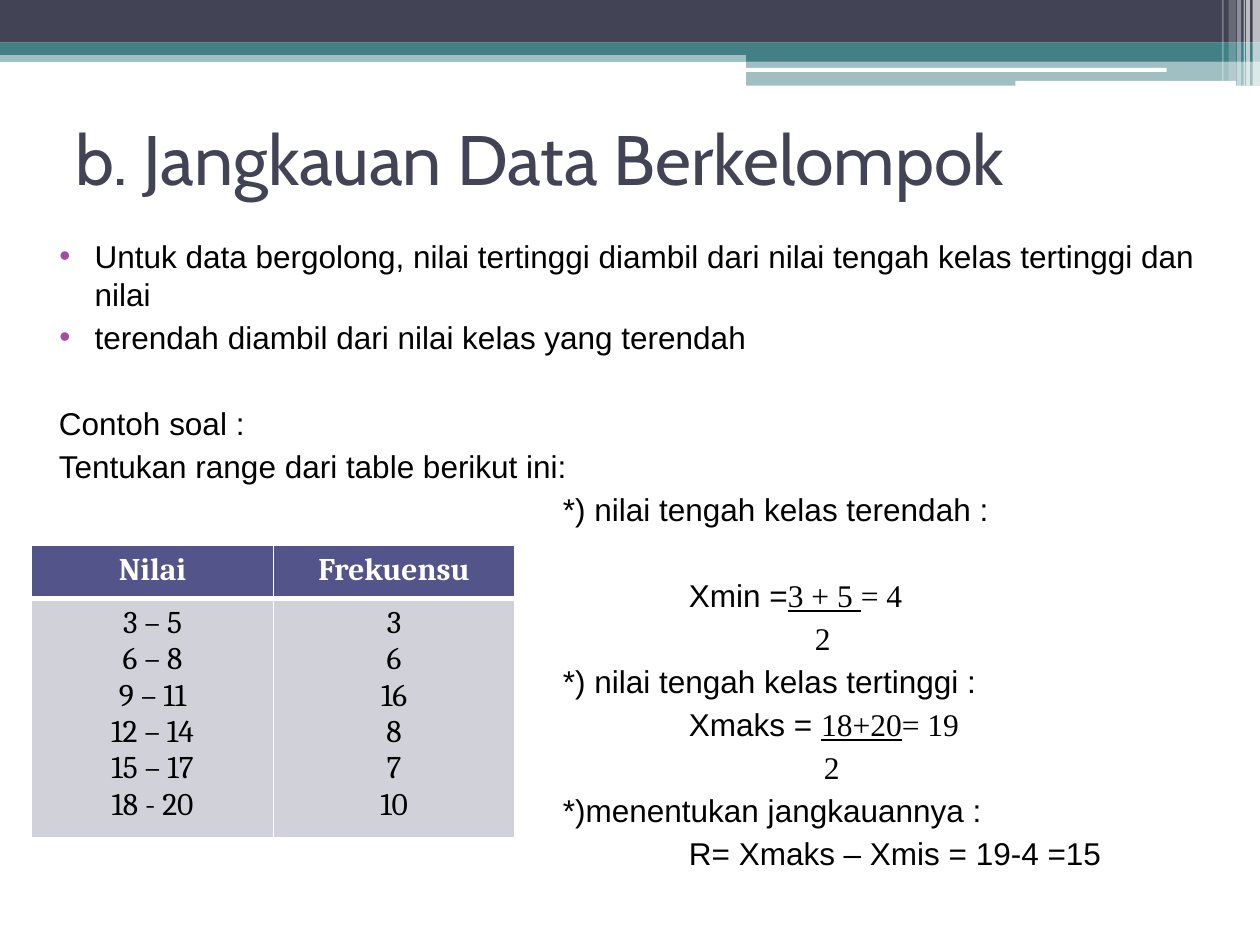
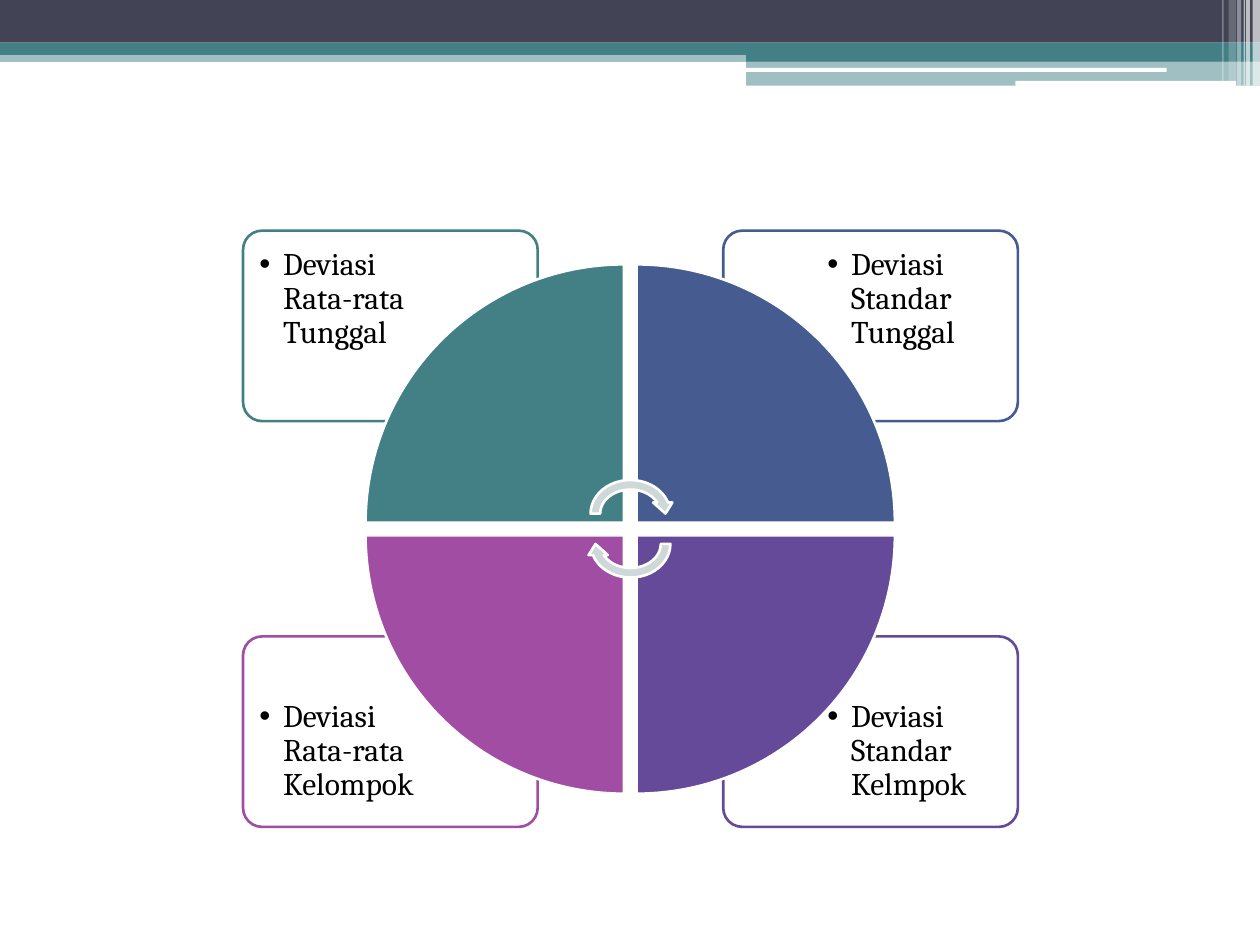
from lxml import etree
from pptx import Presentation
from pptx.dml.color import RGBColor
from pptx.enum.shapes import MSO_SHAPE as Shape
from pptx.enum.text import MSO_ANCHOR as Anchor, PP_ALIGN as Align
from pptx.oxml.ns import qn
from pptx.util import Cm, Pt

COLORS = {
    "ink": "424456", "teal": "438086", "blue": "465B90", "violet": "654A99",
    "purple": "A04DA3", "header": "53548A", "cell": "D1D1DA",
    "arrow": "CFD8D9", "white": "FFFFFF", "black": "000000",
}
WIDTH, HEIGHT = 25.4, 19.05
BANDS = [
    (Shape.RECTANGLE, 0, 1.02, WIDTH, 0.23, "teal", 50),
    (Shape.RECTANGLE, 0, 0, WIDTH, 0.86, "ink", 100),
    (Shape.RECTANGLE, 0, 0.86, WIDTH, 0.25, "teal", 100),
    (Shape.RECTANGLE, 15.04, 0.99, 10.36, 0.25, "teal", 100),
    (Shape.RECTANGLE, 15.04, 1.22, 10.36, 0.51, "teal", 50),
    (Shape.ROUNDED_RECTANGLE, 15.01, 1.37, 8.51, 0.08, "white", 100),
    (Shape.ROUNDED_RECTANGLE, 20.47, 1.63, 4.45, 0.1, "white", 100),
]
STRIPES = [
    (25.25, 0.15, 1.73, 65), (25.12, 0.08, 1.73, 65), (25.07, 0.03, 1.73, 60),
    (24.94, 0.08, 1.73, 40), (24.77, 0.15, 1.63, 20), (24.64, 0.03, 1.63, 30),
]


def rgb(name):
    return RGBColor.from_string(COLORS[name])


class Deck:
    def __init__(self):
        self.prs = Presentation()
        self.prs.slide_width, self.prs.slide_height = Cm(WIDTH), Cm(HEIGHT)
        self.s = None

    def slide(self):
        self.s = self.prs.slides.add_slide(self.prs.slide_layouts[6])
        for kind, x, y, w, h, color, alpha in BANDS:
            self.shape(kind, x, y, w, h, color, alpha)
        for x, w, h, alpha in STRIPES:
            self.shape(Shape.RECTANGLE, x, 0, w, h, "white", alpha)

    def shape(self, kind, x, y, w, h, fill, alpha=100, line=None, rotation=0):
        sp = self.s.shapes.add_shape(kind, Cm(x), Cm(y), Cm(w), Cm(h))
        sp.shadow.inherit = False
        sp.rotation = rotation
        sp.fill.solid()
        sp.fill.fore_color.rgb = rgb(fill)
        if alpha < 100:
            color = sp.fill._xPr.find(qn("a:solidFill"))[0]
            etree.SubElement(color, qn("a:alpha"), val=str(alpha * 1000))
        if line:
            sp.line.color.rgb = rgb(line)
            sp.line.width = Pt(1.5)
        else:
            sp.line.fill.background()
        return sp

    def text_box(self, x, y, w, h, inset=None):
        tf = self.s.shapes.add_textbox(Cm(x), Cm(y), Cm(w), Cm(h)).text_frame
        tf.word_wrap = True
        if inset:
            tf.margin_left = tf.margin_right = Cm(inset)
            tf.margin_top = tf.margin_bottom = Cm(inset)
        return tf

    def style(self, r, font, size=18, color="black", bold=False):
        r.font.name, r.font.size, r.font.bold = font, Pt(size), bold
        r.font.color.rgb = rgb(color)

    def indent(self, p, left, hanging=0, bullet_color=None):
        pPr = p._p.get_or_add_pPr()
        pPr.set("marL", str(Cm(left)))
        pPr.set("indent", str(Cm(-hanging)))
        if bullet_color:
            color = etree.SubElement(pPr, qn("a:buClr"))
            etree.SubElement(color, qn("a:srgbClr"), val=COLORS[bullet_color])
            etree.SubElement(pPr, qn("a:buFont"), typeface="Arial")
            etree.SubElement(pPr, qn("a:buChar"), char="•")

    def title(self, text):
        tf = self.text_box(1.27, 1.7, 22.86, 2.97)
        tf.vertical_anchor = Anchor.MIDDLE
        tf.text = text
        self.style(tf.paragraphs[0].runs[0], "Cabin", 40, "ink")

    def body(self, lines):
        tf = self.text_box(0.64, 4.65, 23.93, 13.61)
        for i, (left, bullet, before, runs) in enumerate(lines):
            p = tf.add_paragraph() if i else tf.paragraphs[0]
            self.indent(p, left, 0.71 if bullet else 0, "purple" if bullet else None)
            p.line_spacing = Pt(21.6)
            if i:
                p.space_before = Pt(before)
            for text, font, underline in runs:
                r = p.add_run()
                r.text = text
                self.style(r, font)
                if underline:
                    r.font.underline = True

    def border(self, cell, side, width):
        ln = etree.SubElement(cell._tc.get_or_add_tcPr(), qn("a:ln" + side), w=str(Pt(width)))
        fill = etree.SubElement(ln, qn("a:solidFill"))
        etree.SubElement(fill, qn("a:srgbClr"), val=COLORS["white"])

    def table(self, x, y, col_width, row_heights, rows):
        cols = len(rows[0])
        frame = self.s.shapes.add_table(len(rows), cols, Cm(x), Cm(y),
                                        Cm(col_width * cols), Cm(sum(row_heights)))
        tbl = frame.table
        for col in tbl.columns:
            col.width = Cm(col_width)
        for i, (height, row) in enumerate(zip(row_heights, rows)):
            header = i == 0
            tbl.rows[i].height = Cm(height)
            for j, text in enumerate(row):
                cell = tbl.cell(i, j)
                for side, width in zip("LRTB", (1, 1, 1, 3) if header else (1, 1, 3, 1)):
                    self.border(cell, side, width)
                cell.fill.solid()
                cell.fill.fore_color.rgb = rgb("header" if header else "cell")
                cell.text_frame.text = text
                for p in cell.text_frame.paragraphs:
                    p.alignment = Align.CENTER
                    self.style(p.runs[0], "Cambria", 18, "white" if header else "black", header)

    def card(self, x, y, text_dx, text_dy, text, color):
        sp = self.shape(Shape.ROUNDED_RECTANGLE, x, y, 5.94, 3.84, "white", 90, color)
        sp.adjustments[0] = 0.1
        tf = self.text_box(x + text_dx, y + text_dy, 3.99, 2.72, 0.25)
        tf.text = text
        p = tf.paragraphs[0]
        self.indent(p, 0.48, 0.48, "black")
        p.line_spacing = 0.9
        self.style(p.runs[0], "Cambria")


def range_slide(deck):
    def plain(text):
        return [(text, "Arial", False)]

    def fraction(label, top, result):
        return plain(label) + [(top, "Times New Roman", True), (result, "Times New Roman", False)]

    denominator = [("2", "Times New Roman", False)]
    near, gap = 3, 27.6
    margin, step, formula = 0.3, 10.46, 13
    deck.slide()
    deck.title("b. Jangkauan Data Berkelompok")
    deck.body([
        (1.02, True, near, plain("Untuk data bergolong, nilai tertinggi diambil dari nilai tengah kelas tertinggi dan nilai")),
        (1.02, True, near, plain("terendah diambil dari nilai kelas yang terendah")),
        (margin, False, gap, plain("Contoh soal :")),
        (margin, False, near, plain("Tentukan range dari table berikut ini:")),
        (step, False, near, plain("*) nilai tengah kelas terendah :")),
        (formula, False, gap, fraction("Xmin =", "3 + 5 ", "= 4")),
        (15.54, False, near, denominator),
        (step, False, near, plain("*) nilai tengah kelas tertinggi :")),
        (formula, False, near, fraction("Xmaks = ", "18+20", "= 19")),
        (15.72, False, near, denominator),
        (step, False, near, plain("*)menentukan jangkauannya :")),
        (formula, False, near, plain("R= Xmaks – Xmis = 19-4 =15")),
    ])
    classes = [("3 – 5", 3), ("6 – 8", 6), ("9 – 11", 16),
               ("12 – 14", 8), ("15 – 17", 7), ("18 - 20", 10)]
    columns = ["\n".join(str(v) for v in values) for values in zip(*classes)]
    deck.table(0.64, 11, 4.87, (1.07, 4.62), [("Nilai", "Frekuensu"), columns])


def deviation_slide(deck):
    quadrants = [
        (0, 0, "Deviasi Rata-rata Tunggal", "teal"),
        (1, 0, "Deviasi Standar Tunggal", "blue"),
        (1, 1, "Deviasi Standar Kelmpok", "violet"),
        (0, 1, "Deviasi Rata-rata Kelompok", "purple"),
    ]
    deck.slide()
    for col, row, text, color in quadrants:
        deck.card((4.9, 14.58)[col], (4.65, 12.83)[row],
                  (0.08, 1.85)[col], (0.1, 1.04)[row], text, color)
    for i, (col, row, _, color) in enumerate(quadrants):
        deck.shape(Shape.PIE_WEDGE, 7.37 + 5.46 * col, 5.33 + 5.46 * row,
                   5.21, 5.21, color, line="white", rotation=90 * i)
    for y, rotation in ((9.58, 0), (10.19, 180)):
        deck.shape(Shape.CIRCULAR_ARROW, 11.81, y, 1.8, 1.55, "arrow",
                   line="white", rotation=rotation)


def main():
    deck = Deck()
    range_slide(deck)
    deviation_slide(deck)
    deck.prs.save("out.pptx")


if __name__ == "__main__":
    main()
